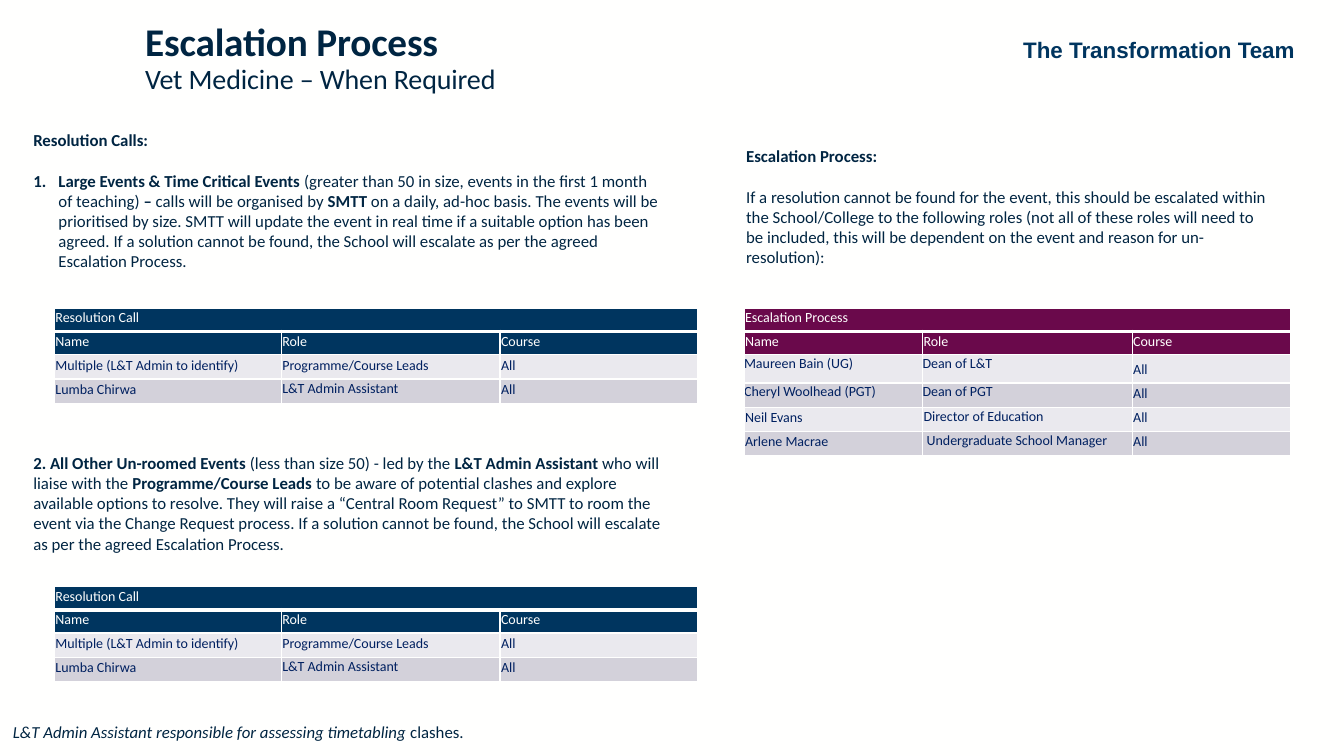
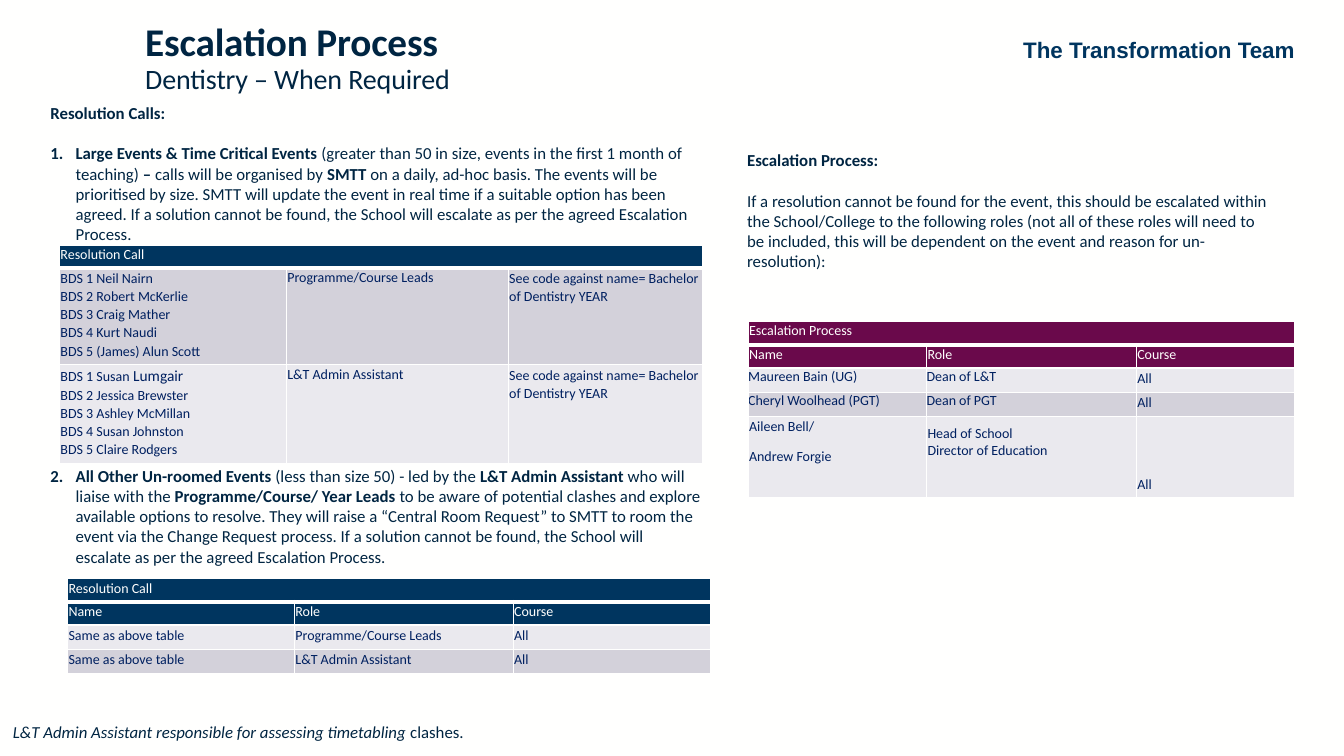
from dataclasses import dataclass
from typing import NamedTuple

from pptx import Presentation
from pptx.dml.color import RGBColor
from pptx.enum.text import MSO_ANCHOR, MSO_AUTO_SIZE, PP_ALIGN
from pptx.oxml import parse_xml
from pptx.oxml.ns import nsdecls
from pptx.oxml.xmlchemy import OxmlElement
from pptx.util import Emu, Pt

TOP, MIDDLE, BOTTOM = MSO_ANCHOR.TOP, MSO_ANCHOR.MIDDLE, MSO_ANCHOR.BOTTOM
LEFT, CENTER = PP_ALIGN.LEFT, PP_ALIGN.CENTER
NO_AUTOFIT = MSO_AUTO_SIZE.NONE

EMU_PER_PX = 9144  # 100 px to the inch
COLORS = {
    "paper": "FFFFFE",
    "ink": "002542",
    "navy": "00355F",
    "plum": "6A094B",
    "cell_text": "002060",
    "light_row": "EAE9EE",
    "dark_row": "D3D1DA",
}
BODY_FONT, TEAM_FONT = "Calibri", "Arial"
TEXT_SIZE, CELL_SIZE = 12, 10
LINE = 14.4  # height of one line of body text, in points
TWO_CONTENT_LAYOUT = 3


class Area(NamedTuple):
    left: int
    top: int
    width: int
    height: int


class Span(NamedTuple):
    text: str
    bold: bool = False
    italic: bool = False
    size: int | None = None


@dataclass(frozen=True)
class Paragraph:
    spans: tuple[Span, ...]
    before: float = 0
    numbered: bool = False


@dataclass(frozen=True)
class Cell:
    lines: tuple[tuple[Span, ...], ...]
    bottom: int = 5


@dataclass(frozen=True)
class Row:
    cells: tuple[Cell, ...]
    height: int = 24
    anchor: MSO_ANCHOR = BOTTOM
    header: bool = False
    flush: bool = False  # name and role sit at the top without margins
    after: int = 8


@dataclass(frozen=True)
class RoleTable:
    left: int
    top: int
    widths: tuple[int, ...]
    caption: str
    color: str
    rows: tuple[Row, ...]


@dataclass(frozen=True)
class EscalationPage:
    school: str
    calls_area: Area
    calls: tuple[Paragraph, ...]
    escalation_area: Area
    tables: tuple[RoleTable, ...]


def px(length: int) -> Emu:
    return Emu(length * EMU_PER_PX)


def rgb(name: str) -> RGBColor:
    return RGBColor.from_string(COLORS[name])


def cell(*lines: str | tuple[Span, ...], bottom: int = 5) -> Cell:
    return Cell(tuple((Span(line),) if isinstance(line, str) else line for line in lines), bottom)


def row(*cells: str | Cell, **options) -> Row:
    return Row(tuple(cell(item) if isinstance(item, str) else item for item in cells), **options)


def add_spans(para, spans: tuple[Span, ...], size: int, color: str, font: str = BODY_FONT) -> None:
    for item in spans:
        span = para.add_run()
        span.text = item.text
        span.font.name = font
        span.font.size = Pt(item.size or size)
        span.font.bold = item.bold
        span.font.italic = item.italic
        span.font.color.rgb = rgb(color)


def place(shape, area: Area) -> None:
    shape.left, shape.top, shape.width, shape.height = map(px, area)


def add_text_box(page, area: Area, spans: tuple[Span, ...], size: int, color: str, font: str = BODY_FONT):
    box = page.shapes.add_textbox(*map(px, area))
    box.text_frame.word_wrap = True
    add_spans(box.text_frame.paragraphs[0], spans, size, color, font)
    return box


def fill_title(title, school: str) -> None:
    place(title, Area(134, 0, 423, 117))
    frame = title.text_frame
    frame.auto_size = NO_AUTOFIT
    frame.vertical_anchor = MIDDLE
    para = frame.paragraphs[0]
    para.alignment = LEFT
    para.line_spacing = 0.9
    add_spans(para, (Span("Escalation Process", True),), 28, "ink")
    para.add_line_break()
    break_format = OxmlElement("a:rPr")
    break_format.set("sz", "2800")
    para._p[-1].append(break_format)
    add_spans(para, (Span(f"{school} – When Required"),), 20, "ink")
    for span in para.runs:
        span._r.get_or_add_rPr().set("spc", "-10")


def fill_body(body, area: Area, paragraphs: tuple[Paragraph, ...]) -> None:
    place(body, area)
    frame = body.text_frame
    frame.auto_size = NO_AUTOFIT
    frame.vertical_anchor = TOP
    for index, content in enumerate(paragraphs):
        para = frame.add_paragraph() if index else frame.paragraphs[0]
        indent = px(25) if content.numbered else 0
        properties = para._p.get_or_add_pPr()
        properties.set("marL", str(indent))
        properties.set("indent", str(-indent))
        bullet = OxmlElement("a:buAutoNum" if content.numbered else "a:buNone")
        if content.numbered:
            bullet.set("type", "arabicPeriod")
        properties.append(bullet)
        para.alignment = LEFT
        para.space_before = Pt(content.before)
        para.space_after = Pt(0)
        add_spans(para, content.spans, TEXT_SIZE, "ink")


def set_borders(target, top: int, bottom: int) -> None:
    """Draw the four cell borders; widths are in points."""
    properties = target._tc.get_or_add_tcPr()
    for side, width in (("L", 1), ("R", 1), ("T", top), ("B", bottom)):
        properties.append(parse_xml(
            f'<a:ln{side} {nsdecls("a")} w="{Pt(width)}"><a:solidFill>'
            f'<a:srgbClr val="{COLORS["paper"]}"/></a:solidFill></a:ln{side}>'))


def fill_cell(target, content: Cell, line: Row, column: int, fill: str) -> None:
    flush = line.flush and column < 2
    margin = 0 if flush else 1
    target.margin_left = target.margin_right = target.margin_top = px(margin)
    target.margin_bottom = px(0 if flush else content.bottom)
    target.vertical_anchor = TOP if flush else line.anchor
    target.fill.solid()
    target.fill.fore_color.rgb = rgb(fill)
    spaced = not (line.header or flush or column == 1)
    for index, spans in enumerate(content.lines):
        para = target.text_frame.add_paragraph() if index else target.text_frame.paragraphs[0]
        if spaced:
            para.line_spacing = 1.07
            para.space_after = Pt(line.after)
        add_spans(para, spans, CELL_SIZE, "paper" if line.header else "cell_text")


def add_role_table(page, spec: RoleTable) -> None:
    rows = (row(spec.caption, height=23, header=True), *spec.rows)
    area = Area(spec.left, spec.top, sum(spec.widths), sum(line.height for line in rows))
    table = page.shapes.add_table(len(rows), len(spec.widths), *map(px, area)).table
    table.first_row = table.horz_banding = False
    for column, width in zip(table.columns, spec.widths):
        column.width = px(width)
    for index, line in enumerate(rows):
        table.rows[index].height = px(line.height)
        for target in table.rows[index].cells:
            set_borders(target, 3 if index == 1 else 1, 3 if index == 0 else 1)
        fill = spec.color if line.header else ("dark_row" if index % 2 else "light_row")
        for column, content in enumerate(line.cells):
            fill_cell(table.cell(index, column), content, line, column, fill)
    table.cell(0, 0).merge(table.cell(0, len(spec.widths) - 1))


def other_events(prefix: str, leads: str) -> tuple[Span, ...]:
    return (
        Span(f"{prefix}All Other Un-roomed Events ", True),
        Span("(less than size 50) - led by the "),
        Span("L&T Admin Assistant ", True),
        Span("who will liaise with the "),
        Span(f"{leads} ", True),
        Span("to be aware of potential clashes and explore available options to resolve. They will raise "
             "a “Central Room Request” to SMTT to room the event via the Change Request process. If a "
             "solution cannot be found, the School will escalate as per the agreed Escalation Process."),
    )


CALLS_INTRO = (
    Paragraph((Span("Resolution Calls:", True),)),
    Paragraph((
        Span("Large Events & Time Critical Events ", True),
        Span("(greater than 50 in size, events in the first 1 month of teaching) "),
        Span("– ", True),
        Span("calls will be organised by "),
        Span("SMTT ", True),
        Span("on a daily, ad-hoc basis. The events will be prioritised by size. SMTT will update the event "
             "in real time if a suitable option has been agreed. If a solution cannot be found, the School "
             "will escalate as per the agreed Escalation Process."),
    ), LINE, True),
)
ESCALATION_TEXT = (
    Paragraph((Span("Escalation Process:", True),)),
    Paragraph((Span(
        "If a resolution cannot be found for the event, this should be escalated within the School/College "
        "to the following roles (not all of these roles will need to be included, this will be dependent on "
        "the event and reason for un-resolution):"),), LINE),
)
FOOTNOTE = (Span("L&T Admin Assistant responsible for assessing timetabling ", italic=True), Span("clashes."))

CALL_WIDTHS, BDS_WIDTHS, ESCALATION_WIDTHS = (225, 217, 196), (225, 220, 193), (177, 208, 157)
LEADS, ADMIN = "Programme/Course Leads", "L&T Admin Assistant"
HEADER = row("Name", "Role", "Course", height=23, header=True)
VET_CALLS = (
    HEADER,
    row("Multiple (L&T Admin to identify)", LEADS, "All"),
    row("Lumba Chirwa", ADMIN, "All", anchor=TOP),
)
SAME_CALLS = (HEADER, *(row("Same as above table", role, "All") for role in (LEADS, ADMIN)))
BDS_CODE = "See code against name= Bachelor of Dentistry YEAR"
BDS_CALLS = (
    row(cell("BDS 1 Neil Nairn", "BDS 2 Robert McKerlie", "BDS 3 Craig Mather", "BDS 4 Kurt Naudi",
             "BDS 5 (James) Alun Scott"), LEADS, BDS_CODE, height=93, anchor=TOP, after=0),
    row(cell((Span("BDS 1 Susan"), Span(" Lumgair", size=11)), "BDS 2 Jessica Brewster",
             "BDS 3 Ashley McMillan", "BDS 4 Susan Johnston", "BDS 5 Claire Rodgers"),
        ADMIN, BDS_CODE, height=97, anchor=TOP, after=0),
)
CHERYL = row("Cheryl Woolhead (PGT)", "Dean of PGT", "All", flush=True)
MAUREEN = ("Maureen Bain (UG)", "Dean of L&T", "All")
VET_ESCALATION = (
    HEADER,
    row(*MAUREEN, height=28, flush=True),
    CHERYL,
    row("Neil Evans", "Director of Education", "All", anchor=TOP),
    row("Arlene Macrae", " Undergraduate School Manager", "All", anchor=TOP),
)
DENTISTRY_ESCALATION = (
    HEADER,
    row(*MAUREEN, flush=True),
    CHERYL,
    row(cell("Aileen Bell/", "Andrew Forgie", bottom=33),
        cell("Head of School", "Director of Education", bottom=39), "All", height=81),
)
PAGES = (
    EscalationPage(
        "Vet Medicine", Area(23, 124, 644, 434),
        (*CALLS_INTRO, Paragraph(other_events("2. ", LEADS), 9 * LINE)),
        Area(730, 140, 542, 151),
        (*(RoleTable(54, top, CALL_WIDTHS, "Resolution Call", "navy", VET_CALLS) for top in (306, 582)),
         RoleTable(738, 306, ESCALATION_WIDTHS, "Escalation Process", "plum", VET_ESCALATION))),
    EscalationPage(
        "Dentistry", Area(40, 97, 667, 475),
        (*CALLS_INTRO, Paragraph(other_events("", "Programme/Course/ Year Leads"), 11 * LINE, True)),
        Area(731, 144, 542, 151),
        (RoleTable(59, 243, BDS_WIDTHS, "Resolution Call", "navy", BDS_CALLS),
         RoleTable(67, 574, CALL_WIDTHS, "Resolution Call", "navy", SAME_CALLS),
         RoleTable(742, 319, ESCALATION_WIDTHS, "Escalation Process", "plum", DENTISTRY_ESCALATION))),
)


def add_page(deck, layout, spec: EscalationPage):
    page = deck.slides.add_slide(layout)
    title, calls, escalation = page.placeholders
    fill_title(title, spec.school)
    fill_body(calls, spec.calls_area, spec.calls)
    fill_body(escalation, spec.escalation_area, ESCALATION_TEXT)
    for table in spec.tables:
        add_role_table(page, table)
    add_text_box(page, Area(3, 711, 738, 30), FOOTNOTE, TEXT_SIZE, "ink")
    return page


def main() -> None:
    deck = Presentation()
    deck.slide_width, deck.slide_height = px(1333), px(750)
    background = deck.slide_master.background.fill
    background.solid()
    background.fore_color.rgb = rgb("paper")
    layout = deck.slide_layouts[TWO_CONTENT_LAYOUT]
    pages = [add_page(deck, layout, spec) for spec in PAGES]
    team = add_text_box(pages[0], Area(995, 31, 309, 37), (Span("The Transformation Team", True),),
                        16, "navy", TEAM_FONT)
    team.text_frame.paragraphs[0].alignment = CENTER
    layout.shapes.element.append(team.element)  # shared by every page
    deck.save("out.pptx")


if __name__ == "__main__":
    main()
